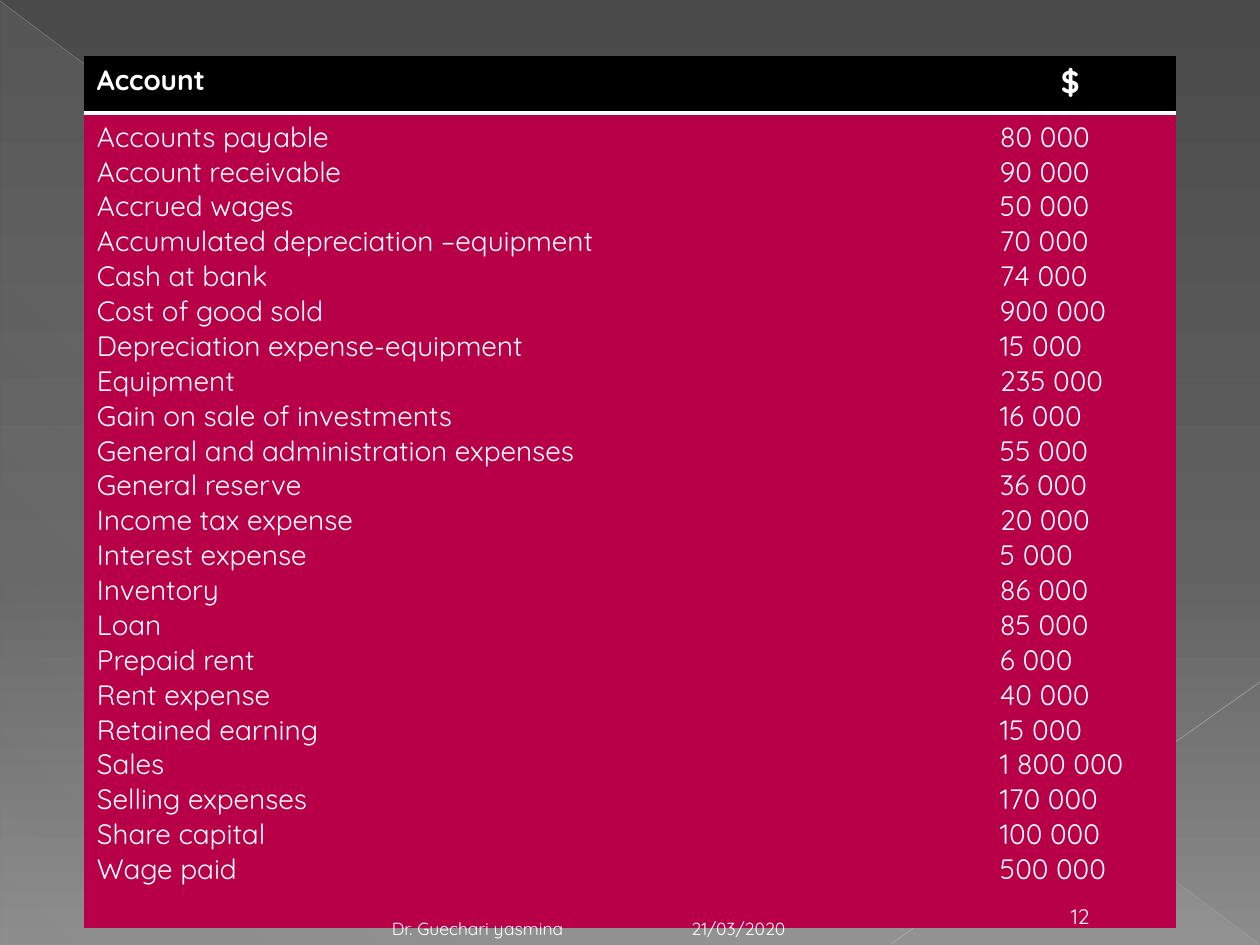
"""Builds the trial balance slide: a table of accounts with amounts over a grey gradient."""
from lxml.etree import SubElement
from pptx import Presentation
from pptx.dml.color import RGBColor
from pptx.enum.shapes import MSO_CONNECTOR as Connector, MSO_SHAPE as Preset
from pptx.enum.text import MSO_ANCHOR as Anchor, PP_ALIGN as Align
from pptx.oxml import parse_xml
from pptx.oxml.ns import nsdecls, qn
from pptx.util import Emu, Pt

ACCOUNTS = [
    ("Accounts payable", "80 000"),
    ("Account receivable", "90 000"),
    ("Accrued wages", "50 000"),
    ("Accumulated depreciation –equipment", "70 000"),
    ("Cash at bank", "74 000"),
    ("Cost of good sold", "900 000"),
    ("Depreciation expense-equipment", "15 000"),
    ("Equipment", "235 000"),
    ("Gain on sale of investments", "16 000"),
    ("General and administration expenses", "55 000"),
    ("General reserve", "36 000"),
    ("Income tax expense", "20 000"),
    ("Interest expense", "5 000"),
    ("Inventory", "86 000"),
    ("Loan", "85 000"),
    ("Prepaid rent", "6 000"),
    ("Rent expense", "40 000"),
    ("Retained earning", "15 000"),
    ("Sales", "1 800 000"),
    ("Selling expenses", "170 000"),
    ("Share capital", "100 000"),
    ("Wage paid", "500 000"),
]
HEADINGS = [("Account", 16, 13), ("$", 18, 74)]
FOOTERS = [
    ("21/03/2020", 10, Align.LEFT, (679, 903, 294, 42), 13),
    ("12", 12, Align.CENTER, (1046, 893, 69, 42), 13),
    ("Dr. Guechari yasmina", 10, Align.RIGHT, (84, 903, 587, 42), 108),
]
COLUMN_WIDTHS = (903, 189)
ROW_HEIGHTS = (57, 815)

FONT = "Quicksand"
WHITE = RGBColor(0xFF, 0xFF, 0xFF)
BLACK = RGBColor(0x00, 0x00, 0x00)
CRIMSON = RGBColor(0xB7, 0x00, 0x47)
DARK_GREY = RGBColor(0x4A, 0x4A, 0x4A)
MID_GREY = RGBColor(0x62, 0x62, 0x62)
LIGHT_GREY = RGBColor(0x8C, 0x8C, 0x8C)
SHEEN = RGBColor(0xD2, 0xD2, 0xD2)
DIAGONALS = [
    ((0, 1, 1259, 944), RGBColor(0xBF, 0xBF, 0xBF), 0.39, 35),
    ((1260, 682, 891, 944), RGBColor(0xC6, 0xC6, 0xC6), 0.47, 45),
]
BACKDROP_STOPS = [(0, DARK_GREY, 100), (60, MID_GREY, 100), (100, LIGHT_GREY, 100)]
SHEEN_STOPS = [(0, SHEEN, 10), (70, SHEEN, 8), (100, SHEEN, 1)]
NO_GRID_STYLE = "{2D5ABB26-0587-4C30-8999-92F81FD0307C}"


def px(*lengths):
    return [Emu(length * 914400 // 126) for length in lengths]


def set_opacity(color, percent):
    SubElement(color, qn("a:alpha"), val=str(percent * 1000))


def set_gradient(fill, owner, stops, angle):
    fill.gradient()
    gradient = owner.find(".//" + qn("a:gradFill"))
    stop_list = gradient.find(qn("a:gsLst"))
    for sample in list(stop_list):
        stop_list.remove(sample)
    for position, color, opacity in stops:
        stop = SubElement(stop_list, qn("a:gs"), pos=str(position * 1000))
        set_opacity(SubElement(stop, qn("a:srgbClr"), val=str(color)), opacity)
    gradient.find(qn("a:lin")).set("ang", str(angle * 60000))


def write(frame, lines, size, bold=False, align=Align.LEFT):
    frame.text = "\n".join(lines)
    for paragraph in frame.paragraphs:
        paragraph.alignment = align
        font = paragraph.font
        font.name, font.size, font.bold = FONT, Pt(size), bold
        font.color.rgb = WHITE


def fill_cell(cell, lines, size, color, indent=13, bold=False):
    write(cell.text_frame, lines, size, bold)
    cell.margin_left, = px(indent)
    cell.fill.solid()
    cell.fill.fore_color.rgb = color


def add_backdrop(slide):
    set_gradient(slide.background.fill, slide.element, BACKDROP_STOPS, 90)
    triangle = slide.shapes.add_shape(Preset.RIGHT_TRIANGLE, *px(1, 2, 1258, 943))
    triangle.shadow.inherit = False
    triangle.line.fill.background()
    set_gradient(triangle.fill, triangle.element, SHEEN_STOPS, 133)
    for ends, color, width, opacity in DIAGONALS:
        diagonal = slide.shapes.add_connector(Connector.STRAIGHT, *px(*ends))
        diagonal.line.color.rgb = color
        diagonal.line.width = Pt(width)
        properties = diagonal.element.spPr
        set_opacity(properties.find(".//" + qn("a:srgbClr")), opacity)
        SubElement(properties, qn("a:effectLst"))


def add_accounts(slide):
    frame = slide.shapes.add_table(
        2, 2, *px(84, 56, sum(COLUMN_WIDTHS), sum(ROW_HEIGHTS)))
    table = frame.table
    frame.element.find(".//" + qn("a:tableStyleId")).text = NO_GRID_STYLE
    for column, width in zip(table.columns, px(*COLUMN_WIDTHS)):
        column.width = width
    for row, height in zip(table.rows, px(*ROW_HEIGHTS)):
        row.height = height
    for index, (heading, entries) in enumerate(zip(HEADINGS, zip(*ACCOUNTS))):
        label, size, indent = heading
        header = table.cell(0, index)
        fill_cell(header, [label], size, BLACK, indent, bold=True)
        header._tc.tcPr.insert(0, parse_xml(
            f'<a:lnB {nsdecls("a")} w="{Pt(2)}"><a:solidFill>'
            f'<a:srgbClr val="{WHITE}"/></a:solidFill></a:lnB>'))
        fill_cell(table.cell(1, index), entries, 16, CRIMSON)


def add_footers(slide):
    for label, size, align, place, right_inset in FOOTERS:
        footer = slide.shapes.add_textbox(*px(*place)).text_frame
        footer.word_wrap = True
        footer.vertical_anchor = Anchor.BOTTOM
        footer.margin_right, = px(right_inset)
        write(footer, [label], size, align=align)


def main():
    deck = Presentation()
    deck.slide_width, deck.slide_height = px(1260, 945)
    slide = deck.slides.add_slide(deck.slide_layouts[6])
    add_backdrop(slide)
    add_accounts(slide)
    add_footers(slide)
    deck.save("out.pptx")


if __name__ == "__main__":
    main()
